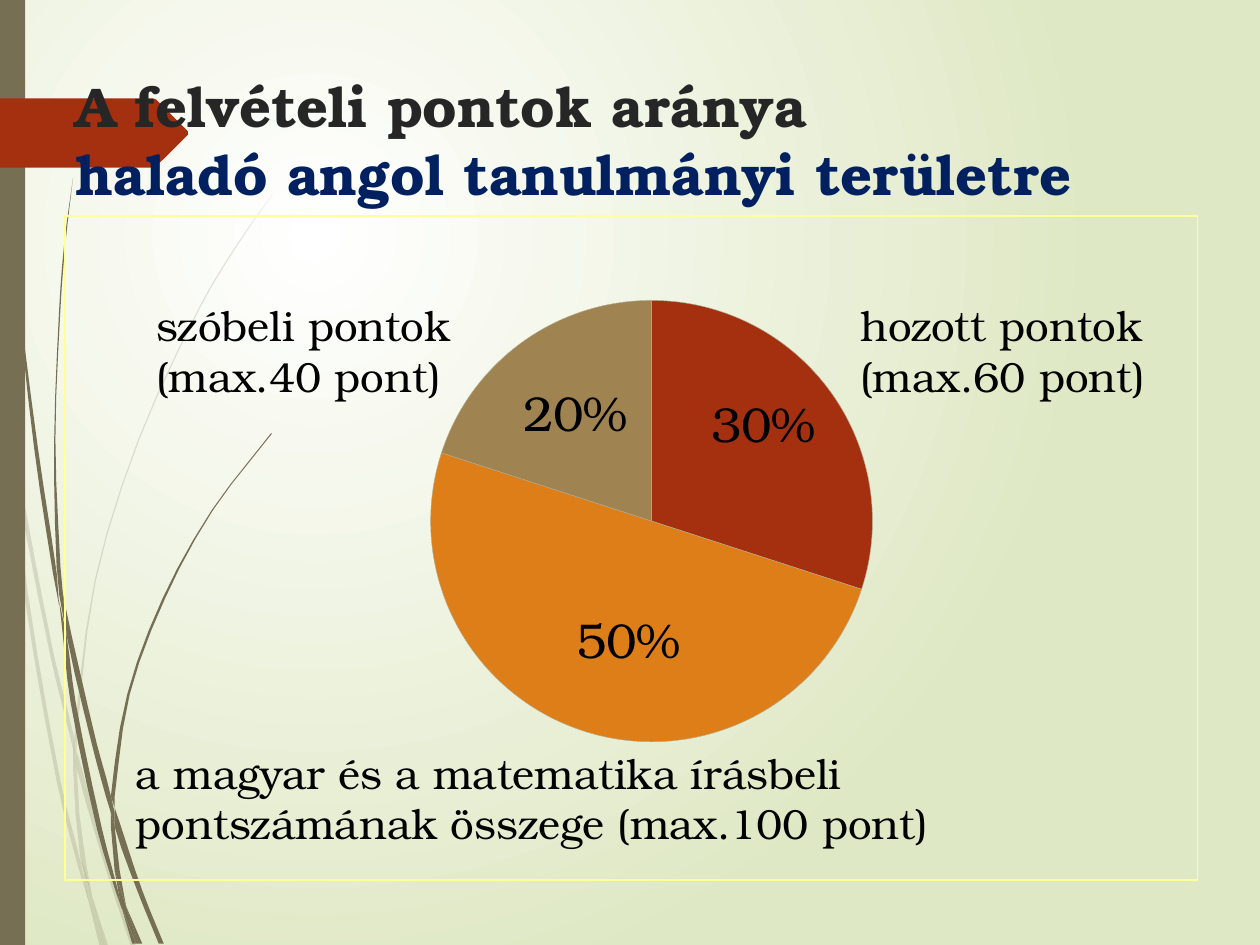
import lxml.etree
import pptx
import pptx.chart.data
import pptx.dml.color
import pptx.enum.chart
import pptx.enum.shapes
import pptx.enum.text
import pptx.oxml
import pptx.oxml.ns
import pptx.util

Inches = pptx.util.Inches
qn = pptx.oxml.ns.qn
COLORS = {
    "paper": "FFFFFF", "lime": "DFE8C4", "stem": "766F54", "red": "A53010",
    "orange": "DE7E18", "tan": "9F8351", "edge": "B2AC93", "frame": "FFFF99",
    "ink": "000000", "heading": "262626", "navy": "002060",
}
FONT = "TeX Gyre Bonum"

# Each blade of grass is a list of (y, left x, right x).
PALE_BLADES = [
    [(2.82, 0, 0), (2.99, 0, 0.03), (3.22, 0.03, 0.06), (3.5, 0.08, 0.08)],
    [(3.45, 0.1, 0.1), (3.76, 0.12, 0.15), (5.21, 0.4, 0.43), (5.86, 0.56, 0.59), (5.99, 0.59, 0.59)],
    [(5.96, 0.61, 0.61), (6.1, 0.61, 0.65), (6.93, 0.85, 0.88), (7.51, 1.04, 1.08)],
    [(7.11, 0.73, 0.73), (7.51, 0.83, 0.86)],
    [(3.5, 0.08, 0.08), (3.76, 0.1, 0.12), (4.7, 0.19, 0.22), (6.2, 0.45, 0.48),
     (6.88, 0.62, 0.65), (7.14, 0.7, 0.7)],
    [(5.99, 0.58, 0.58), (6.1, 0.58, 0.61), (6.46, 0.6, 0.63), (6.83, 0.64, 0.68), (7.11, 0.73, 0.73)],
    [(1.53, 2.17, 2.17), (1.97, 1.86, 1.87), (2.44, 1.58, 1.59), (3.48, 1.1, 1.11),
     (4.61, 0.75, 0.76), (5.84, 0.59, 0.61), (5.96, 0.61, 0.61)],
    [(7.14, 0.7, 0.7), (7.51, 0.79, 0.82)],
    [(5.86, 0.59, 0.59), (5.99, 0.58, 0.61), (6.1, 0.61, 0.61)],
    [(6.83, 0.65, 0.65), (7.11, 0.69, 0.73), (7.51, 0.82, 0.83)],
]
DARK_BLADES = [
    [(0, 0.02, 0.03), (1.1, 0.05, 0.06), (2.33, 0.14, 0.15), (3.55, 0.27, 0.3),
     (4.55, 0.42, 0.45), (4.81, 0.47, 0.47)],
    [(4.72, 0.5, 0.5), (5.05, 0.53, 0.57), (5.91, 0.73, 0.77), (6.32, 0.84, 0.88), (6.45, 0.88, 0.88)],
    [(6.41, 0.91, 0.91), (6.56, 0.91, 0.96), (7.07, 1.09, 1.13), (7.49, 1.26, 1.3)],
    [(4.77, 0.47, 0.47), (5.05, 0.5, 0.53), (5.57, 0.56, 0.6), (6.58, 0.77, 0.81),
     (7.08, 0.92, 0.94), (7.22, 0.97, 0.97)],
    [(1.41, 0.58, 0.58), (1.93, 0.51, 0.52), (2.45, 0.47, 0.48), (3.49, 0.43, 0.44),
     (4.5, 0.45, 0.48), (4.72, 0.49, 0.5)],
    [(7.19, 1, 1), (7.49, 1.1, 1.13)],
    [(4.49, 0.45, 0.45), (4.72, 0.47, 0.5), (5.05, 0.53, 0.53)],
    [(3.44, 2.15, 2.16), (4.05, 1.68, 1.69), (4.75, 1.29, 1.31), (5.51, 1.01, 1.03),
     (6.32, 0.88, 0.91), (6.41, 0.91, 0.91)],
    [(7.22, 0.97, 0.97), (7.49, 1.05, 1.08)],
    [(6.45, 0.88, 0.88), (6.56, 0.88, 0.91), (6.91, 0.91, 0.95), (7.19, 1, 1)],
    [(6.31, 0.88, 0.88), (6.45, 0.88, 0.91), (6.56, 0.91, 0.91)],
    [(6.91, 0.91, 0.91), (7.19, 0.96, 1), (7.49, 1.08, 1.1)],
]
FLAG = [(0, 0.78), (1.21, 0.78), (1.24, 0.79), (1.49, 1.04), (1.49, 1.07),
        (1.24, 1.32), (1.21, 1.33), (0, 1.33)]


def rgb(name):
    return pptx.dml.color.RGBColor.from_string(COLORS[name])


def add_span(para, text, size=24, color="ink", bold=False):
    span = para.add_run()
    span.text = text
    span.font.name = FONT
    span.font.size = pptx.util.Pt(size)
    span.font.bold = bold
    span.font.color.rgb = rgb(color)


def smooth_edge(blade, side):
    knots = [(row[0], row[side]) for row in blade]
    last = len(knots) - 1
    slopes = []
    for i in range(last + 1):
        (y0, x0), (y1, x1) = knots[max(i - 1, 0)], knots[min(i + 1, last)]
        slopes.append((x1 - x0) / (y1 - y0))
    points = []
    for i in range(last):
        (y0, x0), (y1, x1) = knots[i], knots[i + 1]
        height = y1 - y0
        steps = 3 if height > 0.4 else 1
        for t in (step / steps for step in range(steps)):
            ease = t * t * (3 - 2 * t)
            bend = t * (1 - t) ** 2 * slopes[i] - t * t * (1 - t) * slopes[i + 1]
            points.append((x0 + (x1 - x0) * ease + height * bend, y0 + height * t))
    return points + [knots[-1][::-1]]


def layout_xml(**values):
    tags = "".join(f'<c:{tag} val="{value}"/>' for tag, value in values.items())
    return pptx.oxml.parse_xml(
        f'<c:layout {pptx.oxml.ns.nsdecls("c")}><c:manualLayout>{tags}</c:manualLayout></c:layout>')


class SlideBuilder:
    """Holds the style and the current slide, and adds each kind of element."""

    def __init__(self, deck):
        self.page = deck.slides.add_slide(deck.slide_layouts[5])

    def background(self):
        fill = self.page.background.fill
        fill.gradient()
        for stop, name, position in zip(fill.gradient_stops, ("paper", "lime"), (0, 1)):
            stop.color.rgb = rgb(name)
            stop.position = position
        gradient = self.page.element.find(".//" + qn("a:gradFill"))
        gradient.remove(gradient.find(qn("a:lin")))
        circle = lxml.etree.SubElement(gradient, qn("a:path"), {"path": "circle"})
        lxml.etree.SubElement(circle, qn("a:fillToRect"),
                              {"l": "50000", "t": "50000", "r": "100000", "b": "100000"})

    def paint(self, shape, color, opacity=100):
        shape.shadow.inherit = False
        shape.line.fill.background()
        shape.fill.solid()
        shape.fill.fore_color.rgb = rgb(color)
        if opacity < 100:
            tint = shape.element.spPr.find(qn("a:solidFill"))[0]
            lxml.etree.SubElement(tint, qn("a:alpha"), {"val": str(opacity * 1000)})

    def outline(self, corners, color, opacity=100):
        points = [(Inches(x), Inches(y)) for x, y in corners]
        builder = self.page.shapes.build_freeform(*points[0])
        builder.add_line_segments(points[1:], close=True)
        self.paint(builder.convert_to_shape(), color, opacity)

    def bar(self, color, *place):
        rectangle = pptx.enum.shapes.MSO_SHAPE.RECTANGLE
        self.paint(self.page.shapes.add_shape(rectangle, *map(Inches, place)), color)

    def title(self, lines, left, top, width, height):
        title = self.page.shapes.title
        title.left, title.top = Inches(left), Inches(top)
        title.width, title.height = Inches(width), Inches(height)
        self.page.shapes.element.append(title.element)
        frame = title.text_frame
        frame.word_wrap = True
        frame.auto_size = pptx.enum.text.MSO_AUTO_SIZE.NONE
        frame.vertical_anchor = pptx.enum.text.MSO_ANCHOR.TOP
        para = frame.paragraphs[0]
        para.alignment = pptx.enum.text.PP_ALIGN.LEFT
        for number, (text, color) in enumerate(lines):
            if number:
                para.add_line_break()
            add_span(para, text, size=32, color=color, bold=True)

    def text(self, text, *place):
        box = self.page.shapes.add_textbox(*map(Inches, place))
        box.text_frame.word_wrap = True
        add_span(box.text_frame.paragraphs[0], text)

    def pie(self, slices, *place):
        data = pptx.chart.data.CategoryChartData(number_format="0%")
        data.categories = [str(number + 1) for number in range(len(slices))]
        data.add_series("Series 1", [part[0] for part in slices])
        chart = self.page.shapes.add_chart(
            pptx.enum.chart.XL_CHART_TYPE.PIE, *map(Inches, place), data).chart
        chart.has_legend = chart.has_title = False
        chart.font.name, chart.font.size = "Quicksand", pptx.util.Pt(10)
        chart.font.color.rgb = rgb("ink")
        series = chart.plots[0].series[0]
        for number, (_, color, shift_x, shift_y) in enumerate(slices):
            point = series.points[number]
            point.format.fill.solid()
            point.format.fill.fore_color.rgb = rgb(color)
            point.format.line.color.rgb = rgb("edge")
            point.format.line.width = pptx.util.Pt(0.25)
            label = point.data_label
            label.font.name, label.font.size = FONT, pptx.util.Pt(28)
            label.font.color.rgb = rgb("ink")
            label.position = pptx.enum.chart.XL_LABEL_POSITION.CENTER
            tag = series._element.findall(".//" + qn("c:dLbl"))[number]
            tag.insert(1, layout_xml(x=shift_x, y=shift_y))
        area = chart.element.find(".//" + qn("c:plotArea"))
        for old in area.findall(qn("c:layout")):
            area.remove(old)
        area.insert(0, layout_xml(layoutTarget="inner", xMode="edge", yMode="edge",
                                  x=0.323, y=0.105, w=0.39, h=0.709))
        chart.element.find(qn("c:chart")).addnext(pptx.oxml.parse_xml(
            f'<c:spPr {pptx.oxml.ns.nsdecls("c", "a")}><a:noFill/><a:ln w="9525"><a:solidFill>'
            f'<a:srgbClr val="{COLORS["frame"]}"/></a:solidFill></a:ln></c:spPr>'))


def main():
    deck = pptx.Presentation()
    deck.slide_width, deck.slide_height = Inches(10), Inches(7.5)
    slide = SlideBuilder(deck)
    slide.background()
    for blades, opacity in ((PALE_BLADES, 20), (DARK_BLADES, 100)):
        for blade in blades:
            slide.outline(smooth_edge(blade, 1) + smooth_edge(blade, 2)[::-1], "stem", opacity)
    slide.bar("stem", 0, 0, 0.2, 7.5)
    slide.outline(FLAG, "red")
    slide.title([("A felvételi pontok aránya", "heading"),
                 ("haladó angol tanulmányi területre", "navy")], 0.5, 0.52, 9, 1.42)
    slide.pie([(0.3, "red", 0.02, -0.05), (0.5, "orange", 0.01, 0.02),
               (0.2, "tan", -0.01, -0.03)], 0.51, 1.71, 9, 5.28)
    slide.text("a magyar és a matematika írásbeli pontszámának összege (max.100 pont)",
               0.98, 5.88, 8.19, 0.91)
    slide.text("hozott pontok (max.60 pont)", 6.73, 2.33, 2.78, 0.91)
    slide.text("szóbeli pontok (max.40 pont)", 1.14, 2.33, 2.83, 0.91)
    deck.save("out.pptx")


if __name__ == "__main__":
    main()
